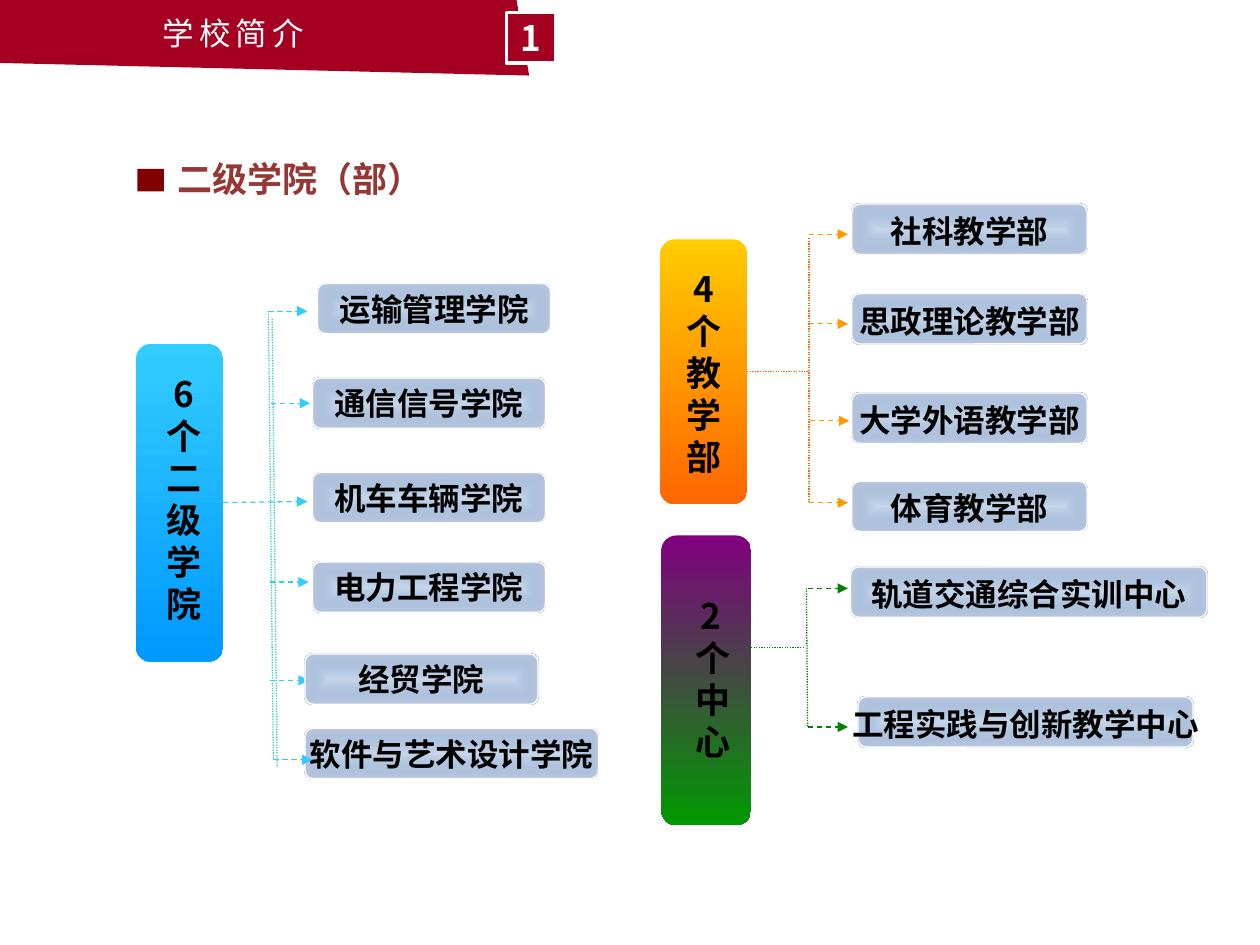
from lxml.etree import SubElement
from pptx import Presentation
from pptx.dml.color import RGBColor
from pptx.enum.dml import MSO_LINE
from pptx.enum.shapes import MSO_CONNECTOR, MSO_SHAPE
from pptx.enum.text import MSO_ANCHOR, PP_ALIGN
from pptx.oxml.ns import qn
from pptx.util import Inches, Pt

COLS, ROWS = 100, 75
SANS = "Noto Sans CJK SC"
RED, SKY, AMBER, GREEN = "A50021", "33CCFF", "FF9900", "008000"


def grid(*cells):
    """Turn grid columns or rows of a tenth of an inch into lengths."""
    return [Inches(c / 10) for c in cells]


def rgb(code):
    """Return the colour of a hex string."""
    return RGBColor.from_string(code)


def write(s, lines, size, color, font=SANS, bold=True, align=PP_ALIGN.CENTER,
          wrap=True, anchor=MSO_ANCHOR.TOP, line_spacing=None, tracking=None):
    """Write one paragraph per line into a shape."""
    tf = s.text_frame
    tf.word_wrap = wrap
    tf.vertical_anchor = anchor
    for i, line in enumerate(lines):
        p = tf.add_paragraph() if i else tf.paragraphs[0]
        p.text = line
        p.alignment = align
        p.line_spacing = line_spacing
        p.font.name, p.font.size, p.font.bold = font, Pt(size), bold
        p.font.color.rgb = rgb(color)
        props = p._p.pPr.find(qn("a:defRPr"))
        SubElement(props, qn("a:ea")).set("typeface", font)
        if tracking:
            props.set("spc", str(tracking * 100))


def add_text(slide, box, lines, size, color, **style):
    """Add a text box."""
    write(slide.shapes.add_textbox(*grid(*box)), lines, size, color, **style)


def add_block(slide, box, fill=None, line=None, width=0.75, kind=MSO_SHAPE.RECTANGLE):
    """Add a preset shape without shadow."""
    s = slide.shapes.add_shape(kind, *grid(*box))
    s.shadow.inherit = False
    if fill:
        s.fill.solid()
        s.fill.fore_color.rgb = rgb(fill)
    if line:
        s.line.color.rgb = rgb(line)
        s.line.width = Pt(width)
    else:
        s.line.fill.background()
    return s


def set_gradient(s, *colors):
    """Fill a shape with a two-colour gradient running downwards."""
    s.fill.gradient()
    s.fill.gradient_angle = 270
    for stop, color in zip(s.fill.gradient_stops, colors):
        stop.color.rgb = rgb(color)


def add_pillar(slide, box, top, bottom, text_box, lines, wrap=True):
    """Add an upright heading block with its stacked characters."""
    s = add_block(slide, box, kind=MSO_SHAPE.ROUNDED_RECTANGLE)
    set_gradient(s, top, bottom)
    add_text(slide, text_box, lines, 20, "000000", wrap=wrap)
    return s


def add_unit(slide, name, left, top, width, line_spacing=None):
    """Add a rounded box glowing from its centre that names one unit."""
    s = add_block(slide, (left, top, width, 4), line="FFFFFF",
                  kind=MSO_SHAPE.ROUNDED_RECTANGLE)
    set_gradient(s, "4F81BD", "BCC8DF")
    fill = s._element.spPr.find(qn("a:gradFill"))
    SubElement(fill.find(".//" + qn("a:srgbClr")), qn("a:alpha")).set("val", "31000")
    fill.remove(fill.find(qn("a:lin")))
    path = SubElement(fill, qn("a:path"), {"path": "shape"})
    SubElement(path, qn("a:fillToRect"), dict.fromkeys("ltrb", "50000"))
    write(s, [name], 18, "000000", font="Arial", wrap=False,
          anchor=MSO_ANCHOR.MIDDLE, line_spacing=line_spacing)


def add_line(slide, start, end, color, arrow=False):
    """Add a dotted line or a dashed arrow."""
    c = slide.shapes.add_connector(MSO_CONNECTOR.STRAIGHT, *grid(*start, *end))
    c.line.color.rgb = rgb(color)
    c.line.width = Pt(0.75)
    c.line.dash_style = MSO_LINE.DASH if arrow else MSO_LINE.ROUND_DOT
    if arrow:
        SubElement(c.line._get_or_add_ln(), qn("a:tailEnd")).set("type", "triangle")
    SubElement(c._element.spPr, qn("a:effectLst"))
    return c


def add_arrows(slide, starts, color, length=3.1):
    """Add level arrows of one length."""
    for x, y in starts:
        add_line(slide, (x, y), (x + length, y), color, arrow=True)


def add_header(slide):
    """Add the banner, the section number and the heading."""
    add_block(slide, (10.9, 13.4, 2.1, 1.8), "800000")
    add_text(slide, (13.1, 12, 30.5, 4.4), ["二级学院（部）"], 20, "953735",
             align=PP_ALIGN.LEFT)
    outline = slide.shapes.build_freeform(0, 0, scale=Inches(0.1))
    outline.add_line_segments([(41, 0), (42.1, 6), (0, 4.8)])
    banner = outline.convert_to_shape()
    banner.shadow.inherit = False
    banner.fill.solid()
    banner.fill.fore_color.rgb = rgb(RED)
    banner.line.fill.background()
    add_text(slide, (11.9, 0.6, 13.8, 4), ["学校简介"], 18, "FFFFFF", bold=False,
             align=PP_ALIGN.LEFT, wrap=False, tracking=3)
    number = add_block(slide, (40.2, 1, 3.9, 4), RED, "FFFFFF", 2)
    write(number, ["1"], 20, "FFFFFF", anchor=MSO_ANCHOR.MIDDLE)


def add_colleges(slide):
    """Add the six colleges."""
    add_arrows(slide, [(21.4, 54), (21.4, 46.2), (21.5, 32), (21.3, 24.7)], SKY)
    add_line(slide, (17, 39.9), (24.4, 39.8), SKY, arrow=True)
    add_pillar(slide, (10.8, 27.3, 6.9, 25.2), SKY, "0099FF",
               (12.2, 29.1, 4.8, 21.2), "6个二级学院", wrap=False)
    for name, left, top, width in [
            ("运输管理学院", 25.2, 22.5, 18.5), ("通信信号学院", 24.8, 30, 18.5),
            ("机车车辆学院", 24.8, 37.5, 18.5), ("电力工程学院", 24.8, 44.6, 18.5),
            ("经贸学院", 24.2, 51.9, 18.5), ("软件与艺术设计学院", 24.2, 57.8, 23.3)]:
        add_unit(slide, name, left, top, width)
    for x, y in [(21.3, 24.7), (21.6, 25.3)]:
        add_line(slide, (x, y), (x + 0.4, y + 35.6), "33CCCC")
    add_arrows(slide, [(21.7, 60.3)], SKY)


def add_departments(slide):
    """Add the four teaching departments."""
    add_arrows(slide, [(64.2, 18.6), (64.2, 25.7), (64.3, 33.4), (64.2, 39.9)], AMBER)
    pillar = add_pillar(slide, (52.4, 19, 6.9, 21), "FFCC00", "FF6600",
                        (53.2, 20.7, 5.4, 17.7), "4个教学部")
    for name, top in [("社科教学部", 16.2), ("思政理论教学部", 23.3),
                      ("大学外语教学部", 31.2), ("体育教学部", 38.2)]:
        add_unit(slide, name, 67.6, top, 18.7, 1.1)
    add_line(slide, (64.2, 18.9), (64.2, 39.8), "FF6600")
    stem = add_line(slide, (59.3, 29.5), (64.2, 29.5), "FF6600")
    stem.begin_connect(pillar, 3)


def add_centres(slide):
    """Add the two centres."""
    add_pillar(slide, (52.5, 42.5, 7.1, 23), "800080", "009900",
               (54.2, 46.7, 4.5, 14.5), ["2", "个", "中心"])
    add_arrows(slide, [(64.1, 46.7), (64.1, 57.7)], GREEN, 3.2)
    add_unit(slide, "工程实践与创新教学中心", 68.1, 55.3, 26.6, 1.1)
    add_line(slide, (64, 46.7), (64.1, 57.7), GREEN)
    add_line(slide, (59.2, 51.4), (63.9, 51.4), GREEN)
    add_unit(slide, "轨道交通综合实训中心", 67.5, 45, 28.3, 1.1)


def main():
    """Build the slide and save it."""
    prs = Presentation()
    prs.slide_width, prs.slide_height = grid(COLS, ROWS)
    slide = prs.slides.add_slide(prs.slide_layouts[6])
    add_header(slide)
    add_colleges(slide)
    add_departments(slide)
    add_centres(slide)
    prs.save("out.pptx")


if __name__ == "__main__":
    main()
